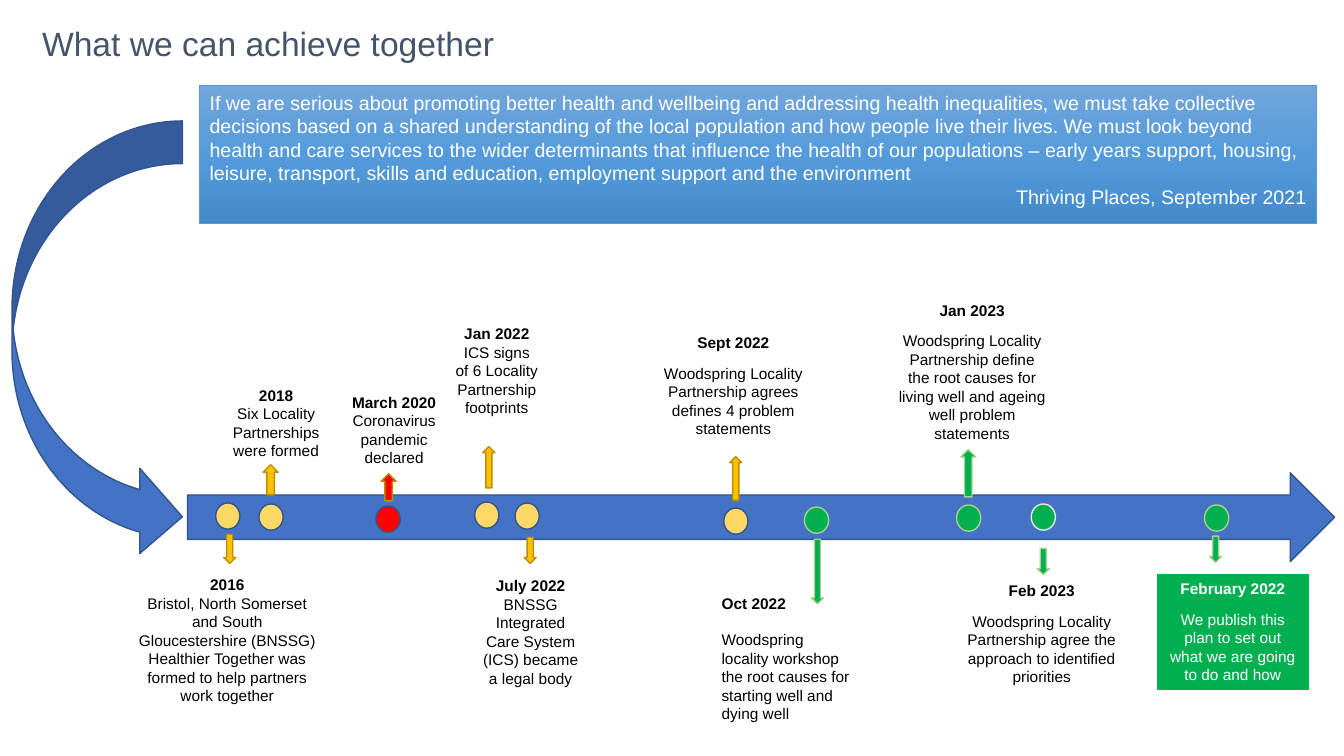
from collections import namedtuple
from copy import deepcopy

from pptx import Presentation
from pptx import util as u
from pptx.dml.color import RGBColor
from pptx.enum import shapes, text
from pptx.oxml.ns import qn

COLOURS = {
    "title": "44546A", "black": "000000", "white": "FFFFFF",
    "blue": "4472C4", "navy": "325491", "quote_edge": "5B9BD5",
    "sand": "FFD966", "amber": "FFC000", "ochre": "BD8E00",
    "red": "FF0000", "green": "00B050", "pale_green": "A9D18E", "pale_grey": "E7E6E6",
}
QUOTE_STOPS = [(0, "71A6DB"), (0.5, "559BDB"), (1, "438AC9")]
DOT_SIZE = (17.3, 18.7)
BAR = (133.9, 337.7, 819.4, 63.4)
BAR_MIDDLE = BAR[1] + BAR[3] / 2

Look = namedtuple("Look", "dot dot_edge arrow arrow_edge")
PAST = Look("sand", "navy", "amber", "ochre")
PANDEMIC = Look("red", "navy", "red", "ochre")
LOCALITY = Look("green", "pale_green", "green", "pale_green")
APPROACH = LOCALITY._replace(dot_edge="pale_grey")

CENTER, LEFT, RIGHT = text.PP_ALIGN.CENTER, text.PP_ALIGN.LEFT, text.PP_ALIGN.RIGHT

Event = namedtuple("Event", "date story box gap dot arrow look align panel",
                   defaults=(CENTER, None))
EVENTS = [
    Event("2016", "Bristol, North Somerset and South Gloucestershire (BNSSG) "
          "Healthier Together was formed to help partners work together",
          (90, 407.5, 144.7, 100.8), 0, (154.1, 359.3), (159.8, 381.6, 8.6, 20.9), PAST),
    Event("2018", "Six Locality Partnerships were formed",
          (151.9, 272.2, 90.7, 60.5), 0, (185, 360), (187.9, 331.9, 10.8, 21.6), PAST),
    Event("March 2020", "Coronavirus pandemic declared",
          (236.2, 277.2, 90.7, 60.5), 0, (268.6, 361.4), (272.2, 338.4, 10.8, 19.4), PANDEMIC),
    Event("Jan 2022", "ICS signs of 6 Locality Partnership footprints",
          (318.2, 228.2, 73.4, 74.2), 0, (339.1, 358.6), (344.9, 319, 8.6, 29.5), PAST),
    Event("July 2022", "BNSSG Integrated Care System (ICS) became a legal body",
          (336.2, 408.2, 85.7, 87.1), 0, (367.9, 359.3), (374.4, 383.8, 8.6, 18.7), PAST),
    Event("Sept 2022", "Woodspring Locality Partnership agrees defines 4 problem statements",
          (463, 234.7, 121.7, 82.1), 8.4, (517, 362.9), (521.3, 326.2, 8.6, 31), PAST),
    Event("Oct 2022", "Woodspring locality workshop the root causes for starting well and "
          "dying well",
          (508.3, 420.5, 106.6, 100.8), 13.2, (574.6, 362.2), (579.6, 385.2, 8.6, 46.1),
          LOCALITY, LEFT),
    Event("Jan 2023", "Woodspring Locality Partnership define the root causes for "
          "living well and ageing well problem statements",
          (633.6, 211.7, 121.7, 108.7), 8.4, (683.3, 360.7), (686.2, 321.1, 10.8, 33.8), LOCALITY),
    Event("Feb 2023", "Woodspring Locality Partnership agree the approach to identified "
          "priorities",
          (683.3, 411.8, 121.7, 82.1), 8.4, (736.6, 360), (740.9, 391.7, 8.6, 18.7), APPROACH),
    Event("February 2022", "We publish this plan to set out what we are going to do and how",
          (826.6, 410.4, 108, 82.1), 8.4, (860.4, 360.7), (864, 383, 8.6, 18.7),
          LOCALITY, CENTER, "green"),
]
QUOTE = (
    "If we are serious about promoting better health and wellbeing and addressing health "
    "inequalities, we must take collective decisions based on a shared understanding of the "
    "local population and how people live their lives. We must look beyond health and care "
    "services to the wider determinants that influence the health of our populations – early "
    "years support, housing, leisure, transport, skills and education, employment support "
    "and the environment"
)


class TimelineSlide:
    """Draws the parts of the timeline on one slide in a shared style."""

    font = "Arial"

    def __init__(self, slide):
        self.slide = slide

    def colour(self, name):
        return RGBColor.from_string(COLOURS[name])

    def shape(self, kind, box, fill, edge, weight=1):
        figure = self.slide.shapes.add_shape(kind, *map(u.Pt, box))
        figure.shadow.inherit = False
        figure.fill.solid()
        figure.fill.fore_color.rgb = self.colour(fill)
        figure.line.color.rgb = self.colour(edge)
        figure.line.width = u.Pt(weight)
        return figure

    def textbox(self, box):
        return self.slide.shapes.add_textbox(*map(u.Pt, box))

    def set_words(self, holder, lines, size, colour, aligns):
        frame = holder.text_frame
        frame.word_wrap = True
        frame.vertical_anchor = text.MSO_ANCHOR.TOP
        frame.text = "\n".join(lines)
        for paragraph, align in zip(frame.paragraphs, aligns):
            paragraph.alignment = align
            for run in paragraph.runs:
                run.font.name = self.font
                run.font.size = u.Pt(size)
                run.font.color.rgb = self.colour(colour)
        return frame

    def title(self, words, box):
        frame = self.set_words(self.textbox(box), [words], 24, "title", [LEFT])
        frame.paragraphs[0].line_spacing = 0.9

    def quote(self, words, credit, box):
        panel = self.shape(shapes.MSO_SHAPE.RECTANGLE, box, "blue", "quote_edge", 0.5)
        panel.fill.gradient()
        panel.fill.gradient_angle = 270
        first_stop = next(panel.element.iter(qn("a:gs")))
        first_stop.addnext(deepcopy(first_stop))
        for stop, (position, shade) in zip(panel.fill.gradient_stops, QUOTE_STOPS):
            stop.position = position
            stop.color.rgb = RGBColor.from_string(shade)
        self.set_words(panel, [words, credit], 14, "white", [LEFT, RIGHT])

    def marker(self, event):
        look = event.look
        self.shape(shapes.MSO_SHAPE.OVAL, event.dot + DOT_SIZE, look.dot, look.dot_edge)
        arrow = self.shape(shapes.MSO_SHAPE.UP_ARROW, event.arrow, look.arrow, look.arrow_edge)
        if event.arrow[1] > BAR_MIDDLE:
            arrow.rotation = 180

    def caption(self, event):
        if event.panel:
            holder = self.shape(shapes.MSO_SHAPE.RECTANGLE, event.box,
                                event.panel, event.panel, 0.75)
        else:
            holder = self.textbox(event.box)
        ink = "white" if event.panel else "black"
        frame = self.set_words(holder, [event.date, event.story], 11, ink, [event.align] * 2)
        frame.auto_size = text.MSO_AUTO_SIZE.SHAPE_TO_FIT_TEXT
        date, story = frame.paragraphs
        date.runs[0].font.bold = True
        story.space_before = u.Pt(event.gap)


def main():
    deck = Presentation()
    deck.slide_width, deck.slide_height = u.Pt(960), u.Pt(540)
    timeline = TimelineSlide(deck.slides.add_slide(deck.slide_layouts[6]))
    timeline.title("What we can achieve together", (23, 15.8, 540.7, 49.7))
    timeline.quote(QUOTE, "Thriving Places, September 2021", (142.6, 61.2, 797.8, 98.6))
    timeline.shape(shapes.MSO_SHAPE.CURVED_RIGHT_ARROW, (8.6, 86.4, 121.7, 313.2),
                   "blue", "navy")
    timeline.shape(shapes.MSO_SHAPE.RIGHT_ARROW, BAR, "blue", "navy")
    for event in EVENTS:
        timeline.marker(event)
        timeline.caption(event)
    deck.save("out.pptx")


if __name__ == "__main__":
    main()
